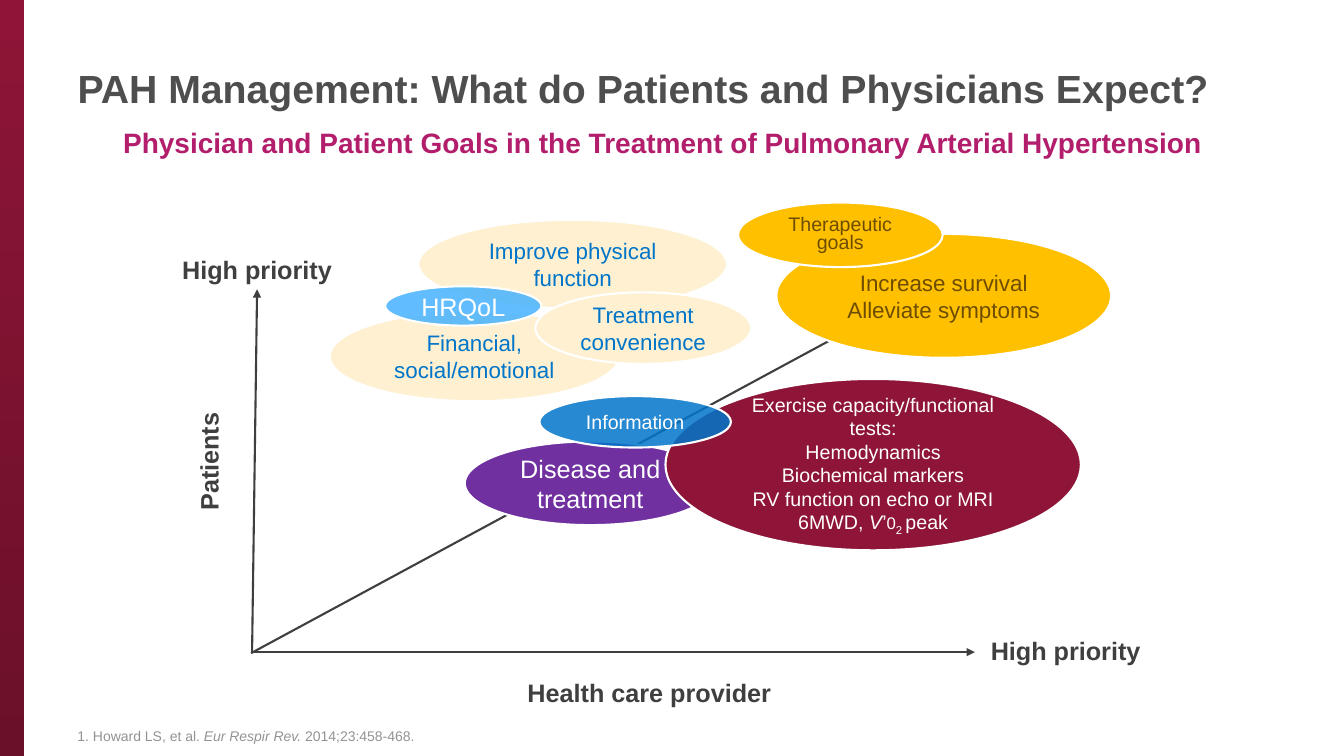
from lxml.etree import SubElement
from pptx import Presentation
from pptx.dml.color import RGBColor
from pptx.enum.shapes import MSO_CONNECTOR, MSO_SHAPE
from pptx.enum.text import MSO_ANCHOR, PP_ALIGN
from pptx.oxml.ns import qn
from pptx.util import Inches, Pt

COLORS = {
    "title": "4D4E4D", "subtitle": "B21E6C", "source": "939393", "axis": "3F3F3F",
    "white": "FFFFFF", "burgundy": "8E1537", "dark burgundy": "6B1029",
    "purple": "7030A0", "blue": "0075C9", "light blue": "46B2FF",
    "gold": "FFC000", "brown": "6E4D02", "cream": "FEF0D0",
}

# A paragraph is a string or a list of (text, run format) pairs
TITLE = "PAH Management: What do Patients and Physicians Expect?"
SUBTITLE = "Physician and Patient Goals in the Treatment of Pulmonary Arterial Hypertension"
SOURCE = [("1. Howard LS, et al. ", {}), ("Eur Respir Rev. ", {"italic": True}),
          ("2014;23:458-468.", {})]
OXYGEN_PEAK = [("6MWD, ", {}), ("V", {"italic": True}), ("’", {}), ("0", {"size": Pt(12)}),
               ("2 ", {"baseline": -25000}), ("peak", {})]

# Start, end, has arrowhead
AXES = [
    ((2.5, 6.47), (2.55, 2.87), True),
    ((2.5, 6.47), (9.67, 6.47), True),
    ((2.49, 6.48), (8.43, 3.27), False),
]
# Text, box, rotation
AXIS_LABELS = [
    ("Patients", (1.48, 4.38, 1.18, 0.4), 270),
    ("High priority", (1.7, 2.47, 1.7, 0.4), 0),
    ("Health care provider", (5.12, 6.67, 2.64, 0.4), 0),
    ("High priority", (9.72, 6.25, 1.7, 0.4), 0),
]
# Paragraphs, box, fill, opacity in percent, text colour, text size, line spacing
GOALS = [
    (["Disease and", "treatment"], (4.61, 4.38, 2.49, 0.83), "purple", 100, "white", 18, 1),
    (["Exercise capacity/functional tests:", "Hemodynamics", "Biochemical markers",
      "RV function on echo or MRI", OXYGEN_PEAK],
     (6.6, 3.76, 4.12, 1.7), "burgundy", 100, "white", 14, 1),
    (["Information"], (5.35, 3.93, 1.9, 0.51), "blue", 85, "white", 14, 1),
    (["Increase survival", "Alleviate symptoms"],
     (7.7, 2.32, 3.32, 1.23), "gold", 100, "brown", 16, 1),
    (["Therapeutic goals"], (7.32, 2.01, 2.03, 0.64), "gold", 100, "brown", 14, 0.8),
    (["Improve physical", "function"], (4.15, 2.18, 3.06, 0.88), "cream", 100, "blue", 16, 1),
    (["Financial,", "social/emotional"], (3.27, 3.09, 2.87, 0.89), "cream", 100, "blue", 16, 1),
    (["Treatment convenience"], (5.31, 2.9, 2.14, 0.71), "cream", 100, "blue", 16, 1),
    (["HRQoL"], (3.82, 2.84, 1.55, 0.39), "light blue", 85, "white", 18, 1),
]


def color(name):
    return RGBColor.from_string(COLORS[name])


def inches(values):
    return [Inches(value) for value in values]


def write(shape, paragraphs, size, text_color, bold=False, align=PP_ALIGN.CENTER,
          anchor=MSO_ANCHOR.MIDDLE, wrap=True, spacing=1):
    frame = shape.text_frame
    frame.word_wrap = wrap
    frame.vertical_anchor = anchor
    for index, content in enumerate(paragraphs):
        paragraph = frame.add_paragraph() if index else frame.paragraphs[0]
        paragraph.alignment = align
        paragraph.line_spacing = spacing
        runs = [(content, {})] if isinstance(content, str) else content
        for text, changes in runs:
            run = paragraph.add_run()
            run.text = text
            run.font.color.rgb = color(text_color)
            values = {"name": "Arial", "size": Pt(size), "bold": bold, **changes}
            baseline = values.pop("baseline", None)
            for name, value in values.items():
                setattr(run.font, name, value)
            if baseline:
                run.font._element.set("baseline", str(baseline))


def add_text(slide, box, paragraphs, size, text_color, **options):
    shape = slide.shapes.add_textbox(*inches(box))
    write(shape, paragraphs, size, text_color, **options)
    return shape


def add_axis(slide, start, end, arrow):
    axis = slide.shapes.add_connector(MSO_CONNECTOR.STRAIGHT, *inches(start + end))
    axis.line.color.rgb = color("axis")
    axis.line.width = Pt(1.5)
    if arrow:
        SubElement(axis.line._get_or_add_ln(), qn("a:tailEnd"), type="triangle")
    SubElement(axis._element.spPr, qn("a:effectLst"))


def add_goal(slide, paragraphs, box, fill, opacity, text_color, size, spacing):
    goal = slide.shapes.add_shape(MSO_SHAPE.OVAL, *inches(box))
    goal.shadow.inherit = False
    goal.fill.solid()
    goal.fill.fore_color.rgb = color(fill)
    if opacity < 100:
        fill_color = goal._element.spPr.find(qn("a:solidFill"))[0]
        SubElement(fill_color, qn("a:alpha"), val=str(opacity * 1000))
    goal.line.color.rgb = color("white")
    goal.line.width = Pt(1.5)
    write(goal, paragraphs, size, text_color, spacing=spacing)


def add_side_band(slide):
    band = slide.shapes.add_shape(MSO_SHAPE.RECTANGLE, *inches((-0.01, 0, 0.25, 7.51)))
    band.shadow.inherit = False
    band.line.fill.background()
    band.fill.gradient()
    band.fill.gradient_angle = 270
    for stop, name, position in zip(band.fill.gradient_stops,
                                    ("burgundy", "dark burgundy"), (0, 1)):
        stop.color.rgb = color(name)
        stop.position = position


def main():
    presentation = Presentation()
    presentation.slide_width, presentation.slide_height = inches((13.33, 7.5))
    slide = presentation.slides.add_slide(presentation.slide_layouts[5])

    # Frame: side band, title, subtitle and source
    add_side_band(slide)
    title = slide.shapes.title
    title.left, title.top, title.width, title.height = inches((0.67, 0.22, 11.75, 1.3))
    write(title, [TITLE], 28, "title", bold=True, align=PP_ALIGN.LEFT)
    add_text(slide, (0.67, 6.95, 11.75, 0.48), [SOURCE], 10, "source",
             align=PP_ALIGN.LEFT, anchor=MSO_ANCHOR.BOTTOM)
    add_text(slide, (1, 1.2, 11.15, 0.44), [SUBTITLE], 20, "subtitle",
             bold=True, anchor=MSO_ANCHOR.TOP)

    # Priority axes and their labels
    for axis in AXES:
        add_axis(slide, *axis)
    for text, box, rotation in AXIS_LABELS:
        label = add_text(slide, box, [text], 18, "axis", bold=True,
                         anchor=MSO_ANCHOR.TOP, wrap=False)
        label.rotation = rotation

    # Goals, from back to front
    for goal in GOALS:
        add_goal(slide, *goal)

    presentation.save("out.pptx")


if __name__ == "__main__":
    main()
